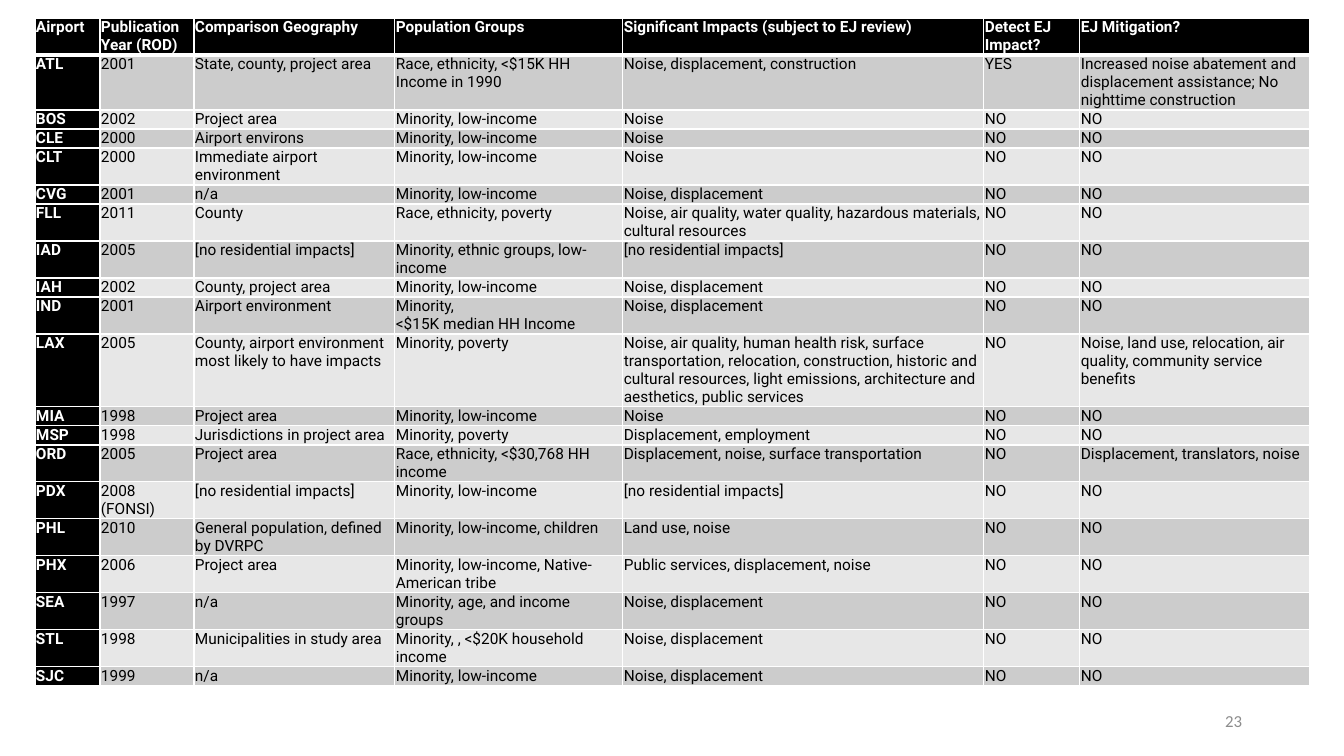
from lxml.etree import SubElement
from pptx import Presentation
from pptx.dml.color import RGBColor
from pptx.enum.text import MSO_ANCHOR, PP_ALIGN
from pptx.oxml.ns import qn
from pptx.util import Pt

HEADINGS = ("Airport", "Publication Year (ROD)", "Comparison Geography", "Population Groups",
            "Significant Impacts (subject to EJ review)", "Detect EJ Impact?", "EJ Mitigation?")
REVIEWS = [
    ("ATL", "2001", "State, county, project area", "Race, ethnicity, <$15K HH Income in 1990",
     "Noise, displacement, construction", "YES",
     "Increased noise abatement and displacement assistance; No nighttime construction"),
    ("BOS", "2002", "Project area", "Minority, low-income", "Noise", "NO", "NO"),
    ("CLE", "2000", "Airport environs", "Minority, low-income", "Noise", "NO", "NO"),
    ("CLT", "2000", "Immediate airport environment", "Minority, low-income", "Noise", "NO", "NO"),
    ("CVG", "2001", "n/a", "Minority, low-income", "Noise, displacement", "NO", "NO"),
    ("FLL", "2011", "County", "Race, ethnicity, poverty",
     "Noise, air quality, water quality, hazardous materials, cultural resources", "NO", "NO"),
    ("IAD", "2005", "[no residential impacts]", "Minority, ethnic groups, low-income",
     "[no residential impacts]", "NO", "NO"),
    ("IAH", "2002", "County, project area", "Minority, low-income", "Noise, displacement", "NO", "NO"),
    ("IND", "2001", "Airport environment", "Minority,\n<$15K median HH Income",
     "Noise, displacement", "NO", "NO"),
    ("LAX", "2005", "County, airport environment most likely to have impacts", "Minority, poverty",
     "Noise, air quality, human health risk, surface transportation, relocation, construction, "
     "historic and cultural resources, light emissions, architecture and aesthetics, public services",
     "NO", "Noise, land use, relocation, air quality, community service benefits"),
    ("MIA", "1998", "Project area", "Minority, low-income", "Noise", "NO", "NO"),
    ("MSP", "1998", "Jurisdictions in project area", "Minority, poverty",
     "Displacement, employment", "NO", "NO"),
    ("ORD", "2005", "Project area", "Race, ethnicity, <$30,768 HH income",
     "Displacement, noise, surface transportation", "NO", "Displacement, translators, noise"),
    ("PDX", "2008 (FONSI)", "[no residential impacts]", "Minority, low-income",
     "[no residential impacts]", "NO", "NO"),
    ("PHL", "2010", "General population, defined by DVRPC", "Minority, low-income, children",
     "Land use, noise", "NO", "NO"),
    ("PHX", "2006", "Project area", "Minority, low-income, Native-American tribe",
     "Public services, displacement, noise", "NO", "NO"),
    ("SEA", "1997", "n/a", "Minority, age, and income groups", "Noise, displacement", "NO", "NO"),
    ("STL", "1998", "Municipalities in study area", "Minority, , <$20K household income",
     "Noise, displacement", "NO", "NO"),
    ("SJC", "1999", "n/a", "Minority, low-income", "Noise, displacement", "NO", "NO"),
]
PAGE_NUMBER = "23"

COLUMN_WIDTHS = (65, 94, 201, 228, 361, 96, 230)
LINES_PER_ROW = (2, 3, 1, 1, 2, 1, 2, 2, 1, 2, 4, 1, 1, 2, 2, 2, 2, 2, 2, 1)
LINE_HEIGHT = 18
BLACK, WHITE, GREY = "000000", "FFFFFF", "8C8C8C"
BANDS = ("E7E7E7", "CCCCCC")


def px(length):
    return round(length * 914400 / 100.8)


def color(hex_value):
    return RGBColor.from_string(hex_value)


def add_run(paragraph, text, font_name, size, hex_value, bold=False):
    run = paragraph.add_run()
    run.text = text
    run.font.name = font_name
    run.font.size = Pt(size)
    run.font.bold = bold
    run.font.color.rgb = color(hex_value)


def add_borders(cell, **widths):
    properties = cell._tc.get_or_add_tcPr()
    for side, points in widths.items():
        line = SubElement(properties, qn(f"a:ln{side}"), w=str(Pt(points)))
        fill = SubElement(line, qn("a:solidFill"))
        SubElement(fill, qn("a:srgbClr"), val=WHITE)


def fill_cell(cell, text, row, column):
    is_heading = row == 0 or column == 0
    add_borders(cell, L=1, R=1, T=3 if row == 1 else 1, B=3 if row == 0 else 1)
    cell.fill.solid()
    cell.fill.fore_color.rgb = color(BLACK if is_heading else BANDS[row % 2])
    cell.margin_left = cell.margin_right = cell.margin_bottom = px(1)
    cell.margin_top = 0
    cell.vertical_anchor = MSO_ANCHOR.TOP
    for index, line in enumerate(text.split("\n")):
        paragraph = cell.text_frame.add_paragraph() if index else cell.text_frame.paragraphs[0]
        add_run(paragraph, line, "Roboto", 11, WHITE if is_heading else BLACK, is_heading)


def main():
    presentation = Presentation()
    presentation.slide_width, presentation.slide_height = px(1344), px(756)
    slide = presentation.slides.add_slide(presentation.slide_layouts[6])

    # Airport review table
    rows = [HEADINGS, *REVIEWS]
    review_table = slide.shapes.add_table(
        len(rows), len(HEADINGS), px(35), px(18), px(sum(COLUMN_WIDTHS)),
        px(LINE_HEIGHT * sum(LINES_PER_ROW))).table
    for column, width in zip(review_table.columns, COLUMN_WIDTHS):
        column.width = px(width)
    for table_row, lines in zip(review_table.rows, LINES_PER_ROW):
        table_row.height = px(LINE_HEIGHT * lines)
    for row, texts in enumerate(rows):
        for column, text in enumerate(texts):
            fill_cell(review_table.cell(row, column), text, row, column)

    # Page number
    page_number = slide.shapes.add_textbox(px(950), px(701), px(302), px(40)).text_frame
    page_number.word_wrap = True
    page_number.vertical_anchor = MSO_ANCHOR.MIDDLE
    page_number.paragraphs[0].alignment = PP_ALIGN.RIGHT
    add_run(page_number.paragraphs[0], PAGE_NUMBER, "Calibri", 12, GREY)

    presentation.save("out.pptx")


if __name__ == "__main__":
    main()
